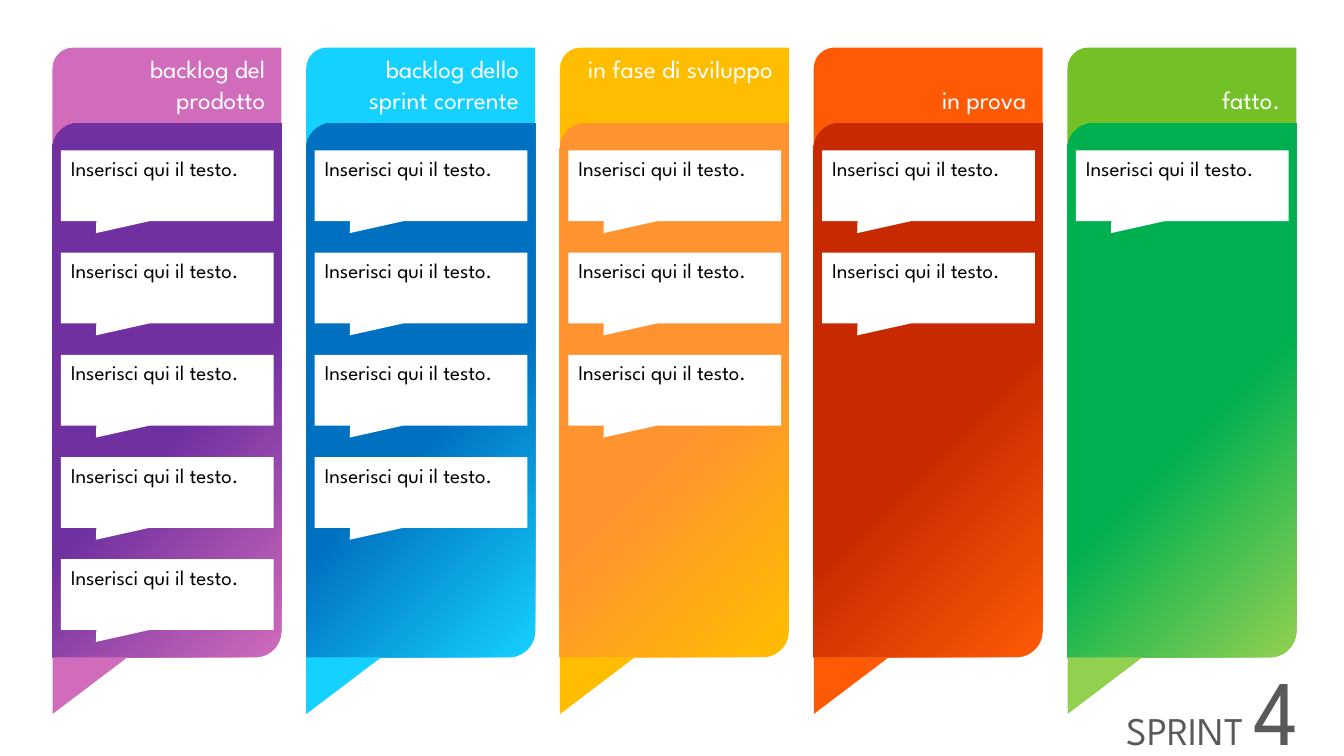
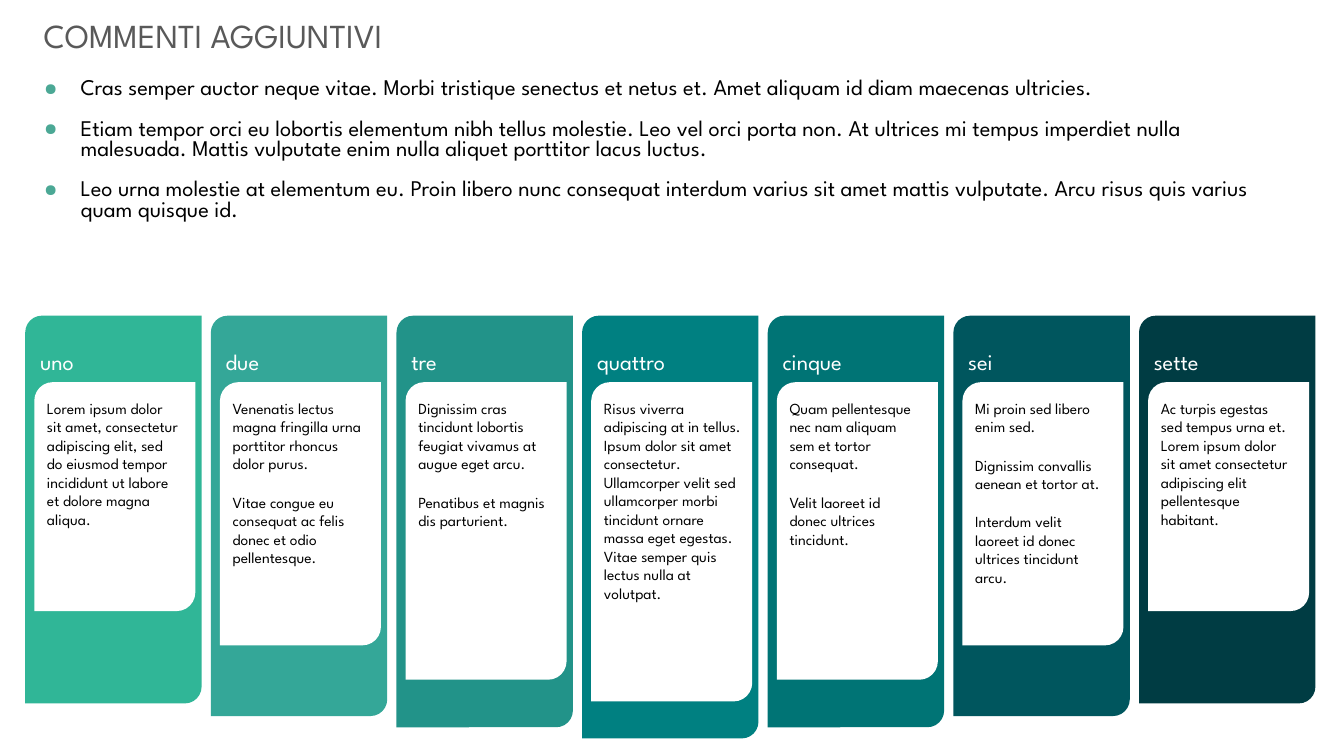
from lxml.etree import SubElement
from pptx import Presentation
from pptx.dml.color import RGBColor
from pptx.enum.shapes import MSO_SHAPE
from pptx.enum.text import MSO_ANCHOR, MSO_AUTO_SIZE, PP_ALIGN
from pptx.oxml.ns import qn
from pptx.util import Pt

# Shared style
FONT = "League Spartan"
WHITE, BLACK, GREY, BULLET = "FFFFFF", "000000", "595959", "4BA895"
PAD = (7.2, 3.6, 7.2, 3.6)

# Sprint board: heading, blank lines above it, head, tail, light, dark, cards
CARD = "Inserisci qui il testo."
BOARD = [
    ("backlog del prodotto", 0, "D06CBB", "D06CBB", "D06CBB", "7030A0", 5),
    ("backlog dello sprint corrente", 0, "15D1FF", "15D1FF", "15D1FF", "0070C0", 4),
    ("in fase di sviluppo", 0, "FFBD00", "FFBD00", "FFBD00", "FF932F", 3),
    ("in prova", 1, "FE5A05", "FE5A05", "FD5A06", "C72900", 2),
    ("fatto.", 1, "73C027", "92D050", "92D050", "00B050", 1),
]

# Comments: bullets, then panels (name, colour, panel height, page height,
# text width, paragraphs)
POINTS = [
    "Cras semper auctor neque vitae. Morbi tristique senectus et netus et. "
    "Amet aliquam id diam maecenas ultricies.",
    "Etiam tempor orci eu lobortis elementum nibh tellus molestie. Leo vel orci "
    "porta non. At ultrices mi tempus imperdiet nulla malesuada. Mattis vulputate "
    "enim nulla aliquet porttitor lacus luctus.",
    "Leo urna molestie at elementum eu. Proin libero nunc consequat interdum "
    "varius sit amet mattis vulputate. Arcu risus quis varius quam quisque id.",
]
PANELS = [
    ("uno", "30B697", 277, 163.5, 108, [
        "Lorem ipsum dolor sit amet, consectetur adipiscing elit, sed do eiusmod "
        "tempor incididunt ut labore et dolore magna aliqua."]),
    ("due", "34A798", 286, 188, 112, [
        "Venenatis lectus magna fringilla urna porttitor rhoncus dolor purus.",
        "Vitae congue eu consequat ac felis donec et odio pellentesque."]),
    ("tre", "229389", 294, 212.5, 106, [
        "Dignissim cras tincidunt lobortis feugiat vivamus at augue eget arcu.",
        "Penatibus et magnis dis parturient."]),
    ("quattro", "008081", 302, 228, 115, [
        "Risus viverra adipiscing at in tellus. Ipsum dolor sit amet consectetur. "
        "Ullamcorper velit sed ullamcorper morbi tincidunt ornare massa eget "
        "egestas. Vitae semper quis lectus nulla at volutpat."]),
    ("cinque", "007475", 294, 212.5, 107, [
        "Quam pellentesque nec nam aliquam sem et tortor consequat.",
        "Velit laoreet id donec ultrices tincidunt."]),
    ("sei", "00565E", 286, 188, 108, [
        "Mi proin sed libero enim sed.",
        "Dignissim convallis aenean et tortor at.",
        "Interdum velit laoreet id donec ultrices tincidunt arcu."]),
    ("sette", "003C43", 277, 163.5, 108, [
        "Ac turpis egestas sed tempus urna et. Lorem ipsum dolor sit amet "
        "consectetur adipiscing elit pellentesque habitant."]),
]


def color(code):
    return RGBColor.from_string(code)


def write(frame, paras, size=11, ink=BLACK, align=PP_ALIGN.LEFT, gap=0, lead=None):
    """Fill a frame; a paragraph is a string or a list of (text, size) runs."""
    for i, para in enumerate(paras):
        line = frame.paragraphs[0] if i == 0 else frame.add_paragraph()
        line.alignment, line.line_spacing = align, lead
        line.space_before, line.space_after = Pt(0), Pt(gap)
        for text, points in [(para, size)] if isinstance(para, str) else para:
            run = line.add_run()
            run.text = text
            run.font.name, run.font.size = FONT, Pt(points)
            run.font.color.rgb = color(ink)


def setup(frame, pad=PAD, anchor=MSO_ANCHOR.TOP):
    frame.word_wrap, frame.auto_size = True, MSO_AUTO_SIZE.NONE
    frame.vertical_anchor = anchor
    (frame.margin_left, frame.margin_top,
     frame.margin_right, frame.margin_bottom) = map(Pt, pad)
    return frame


def shape(slide, kind, box, fill, adjust=(), pad=PAD):
    item = slide.shapes.add_shape(kind, *map(Pt, box))
    item.shadow.inherit = False
    item.line.fill.background()
    for i, value in enumerate(adjust):
        item.adjustments[i] = value
    if isinstance(fill, str):
        item.fill.solid()
        item.fill.fore_color.rgb = color(fill)
    else:
        item.fill.gradient()
        item.fill.gradient_angle = 135
        for stop, code, place in zip(item.fill.gradient_stops, fill, (0, 0.43)):
            stop.color.rgb, stop.position = color(code), place
    setup(item.text_frame, pad)
    return item


def leaf(slide, box, fill, curve=0.115, pad=PAD):
    return shape(slide, MSO_SHAPE.ROUND_2_DIAG_RECTANGLE, box, fill, (curve, 0), pad)


def title(slide, box, para, align=PP_ALIGN.LEFT, anchor=MSO_ANCHOR.TOP):
    item = slide.shapes.title
    item.left, item.top, item.width, item.height = map(Pt, box)
    write(setup(item.text_frame, anchor=anchor), [para], 24, GREY, align)


def column(slide, x, text, blank, head, tail, light, dark, cards):
    top = leaf(slide, (x, 34, 163.5, 129), head, pad=(7.2, 22 * blank, 7.2, 3.6))
    write(top.text_frame, [text], 18, WHITE, PP_ALIGN.RIGHT)
    leaf(slide, (x, 88, 163.5, 381.5), (light, dark))
    tip = shape(slide, MSO_SHAPE.RIGHT_TRIANGLE, (x + 6.5, 463, 40.5, 53.5), tail)
    tip.rotation = 90
    for row in range(cards):
        card = shape(slide, MSO_SHAPE.RECTANGULAR_CALLOUT,
                     (x + 6, 107.5 + 73 * row, 152, 50.5), WHITE, (-0.335, 0.669))
        write(card.text_frame, [CARD], 15, gap=14)


def panel(slide, x, name, fill, tall, page, wide, paras):
    back = leaf(slide, (x, 225.5, 126, tall), fill, 0.095, (7.2, 20, 7.2, 3.6))
    write(back.text_frame, [name], 16, WHITE)
    leaf(slide, (x + 6.5, 273, 115, page), WHITE)
    box = slide.shapes.add_textbox(*map(Pt, (x + 8.5, 281.5, wide, page - 9)))
    write(setup(box.text_frame), paras, gap=14)


def points(slide, box, paras):
    table = slide.shapes.add_table(1, 1, *map(Pt, box)).table
    table.first_row = table.horz_banding = False
    cell = table.cell(0, 0)
    cell.fill.background()
    cell.margin_left = cell.margin_right = Pt(21.6)
    cell.margin_top = cell.margin_bottom = Pt(14.4)
    write(cell.text_frame, paras, 16, gap=14, lead=1.0)
    for line in cell.text_frame.paragraphs:
        props = line._p.get_or_add_pPr()
        props.set("marL", str(Pt(36)))
        props.set("indent", str(Pt(-26)))
        tint = SubElement(props, qn("a:buClr"))
        SubElement(tint, qn("a:srgbClr"), val=BULLET)
        SubElement(props, qn("a:buSzPct"), val="75000")
        SubElement(props, qn("a:buChar"), char="●")


def main():
    deck = Presentation()
    deck.slide_width, deck.slide_height = Pt(960), Pt(540)
    layout = deck.slide_layouts[5]

    # Sprint board
    slide = deck.slides.add_slide(layout)
    title(slide, (782.5, 472.5, 152, 67.5), [("SPRINT ", 28), ("4", 66)],
          PP_ALIGN.RIGHT, MSO_ANCHOR.MIDDLE)
    for i, data in enumerate(BOARD):
        column(slide, 37.5 + 181.25 * i, *data)

    # Further comments
    slide = deck.slides.add_slide(layout)
    title(slide, (24, 7, 310, 36), "COMMENTI AGGIUNTIVI")
    points(slide, (0, 43, 942.5, 172), POINTS)
    for i, data in enumerate(PANELS):
        panel(slide, 18 + 132.6 * i, *data)

    deck.save("out.pptx")


if __name__ == "__main__":
    main()
